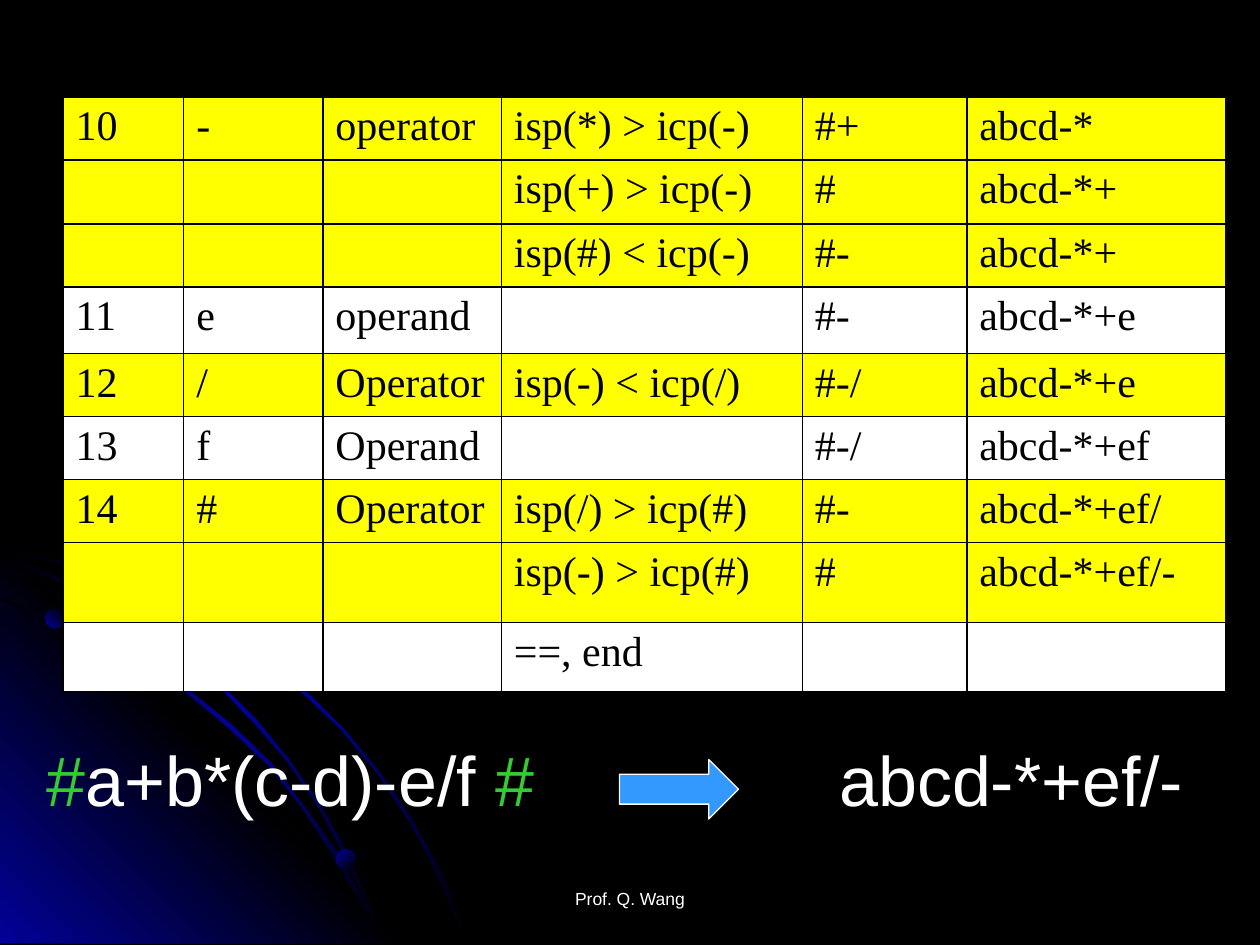
from copy import deepcopy

from lxml.etree import SubElement as Sub
from pptx import Presentation
from pptx.dml.color import RGBColor as RGB
from pptx.enum.shapes import MSO_SHAPE as Shape
from pptx.enum.text import PP_ALIGN as Align
from pptx.oxml.ns import qn
from pptx.util import Pt

BLACK = RGB(0x00, 0x00, 0x00)
WHITE = RGB(0xFF, 0xFF, 0xFF)
YELLOW = RGB(0xFF, 0xFF, 0x00)
GREEN = RGB(0x33, 0xCC, 0x33)
SKY = RGB(0x33, 0x99, 0xFF)
NAVY = RGB(0x01, 0x01, 0x99)

FLOOR = 539.3
WIDE_ARC = [(0, 313), (41, 322), (70.5, 330.5), (98, 343.5), (125.5, 358),
            (150.5, 375), (174, 394.5), (196, 416), (216, 440), (234, 466.5),
            (244, 484.5), (253.5, 502.5), (260.5, 520.5), (268, FLOOR)]
LOW_ARC = [(0, 342), (29.5, 351.5), (57, 363.5), (84, 378.5), (109.5, 395.5),
           (132.5, 414.5), (155, 436.5), (174, 461), (191.5, 486.5),
           (206, 512.5), (213, 525.5), (218, FLOOR)]
MID_ARC = [(0, 318), (28, 327.5), (54.5, 340.5), (80, 355), (103.5, 371.5),
           (126, 391), (147, 412.5), (165, 434), (183, 460), (193.5, 479),
           (203, 499), (211.5, 518.5), (218, FLOOR)]

COLS = [69, 79.5, 102, 172, 94, 148]
HEIGHTS = [36, 36.5, 36, 38, 36, 36, 36, 45.5, 39.5]
STEPS = [
    (YELLOW, "10", "-", "operator", "isp(*) > icp(-)", "#+", "abcd-*"),
    (YELLOW, "", "", "", "isp(+) > icp(-)", "#", "abcd-*+"),
    (YELLOW, "", "", "", "isp(#) < icp(-)", "#-", "abcd-*+"),
    (WHITE, "11", "e", "operand", "", "#-", "abcd-*+e"),
    (YELLOW, "12", "/", "Operator", "isp(-) < icp(/)", "#-/", "abcd-*+e"),
    (WHITE, "13", "f", "Operand", "", "#-/", "abcd-*+ef"),
    (YELLOW, "14", "#", "Operator", "isp(/) > icp(#)", "#-", "abcd-*+ef/"),
    (YELLOW, "", "", "", "isp(-) > icp(#)", "#", "abcd-*+ef/-"),
    (WHITE, "", "", "", "==, end", "", ""),
]


def style(para, face, size, color):
    font = para.font
    font.name, font.size, font.color.rgb = face, Pt(size), color


def blend(shape, colors, angle):
    """Fill with evenly spaced colours; the angle runs counterclockwise."""
    shape.shadow.inherit = False
    shape.line.fill.background()
    fill = shape.fill
    fill.gradient()
    fill.gradient_angle = angle
    stops = next(shape._element.spPr.iter(qn("a:gsLst")))
    for _ in colors[2:]:
        stops.append(deepcopy(stops[0]))
    for i, (stop, color) in enumerate(zip(fill.gradient_stops, colors)):
        stop.color.rgb = color
        stop.position = i / (len(colors) - 1)


def add_path(slide, points, colors, angle):
    path = slide.shapes.build_freeform(*points[0], scale=Pt(1))
    path.add_line_segments(points[1:], close=True)
    blend(path.convert_to_shape(), colors, angle)


def add_arc(slide, edge):
    """Draw a thin band along the inner side of an edge."""
    inner = [(max(0, x - 1.4), min(FLOOR, y + 1.4)) for x, y in edge]
    add_path(slide, edge + inner[::-1], [BLACK, NAVY, BLACK], 315)


def add_dot(slide, left, top, size, angle):
    box = map(Pt, (left, top, size, size))
    dot = slide.shapes.add_shape(Shape.OVAL, *box)
    blend(dot, [NAVY, BLACK], angle)


def add_decor(slide):
    add_arc(slide, WIDE_ARC)
    corner = [(0, 307.5), (232, FLOOR), (0, FLOOR)]
    add_path(slide, corner, [NAVY, BLACK, NAVY], 45)
    add_arc(slide, LOW_ARC)
    add_arc(slide, MID_ARC)
    add_dot(slide, 26, 348, 11, 45)
    add_dot(slide, 192, 485.5, 11.5, 315)


def add_border(cell):
    props = cell._tc.get_or_add_tcPr()
    for side in ("lnL", "lnR", "lnT", "lnB"):
        line = Sub(props, qn(f"a:{side}"), w=str(Pt(1)))
        fill = Sub(line, qn("a:solidFill"))
        Sub(fill, qn("a:srgbClr"), val=str(BLACK))


def add_steps(slide):
    box = map(Pt, (36, 55.5, sum(COLS), sum(HEIGHTS)))
    table = slide.shapes.add_table(len(STEPS), len(COLS), *box).table
    table.first_row = table.horz_banding = False
    for col, width in zip(table.columns, COLS):
        col.width = Pt(width)
    for row, height, (color, *texts) in zip(table.rows, HEIGHTS, STEPS):
        row.height = Pt(height)
        for cell, text in zip(row.cells, texts):
            add_border(cell)
            cell.fill.solid()
            cell.fill.fore_color.rgb = color
            cell.text = text
            style(cell.text_frame.paragraphs[0], "Times New Roman", 24, BLACK)


def add_para(slide, left, top, width, height, before):
    box = slide.shapes.add_textbox(*map(Pt, (left, top, width, height)))
    box.text_frame.word_wrap = True
    para = box.text_frame.paragraphs[0]
    para.space_before = Pt(before)
    return para


def add_result(slide):
    para = add_para(slide, 19.5, 417.5, 684, 73.5, 4)
    tabs = Sub(para._p.get_or_add_pPr(), qn("a:tabLst"))
    Sub(tabs, qn("a:tab"), pos=str(Pt(453)), algn="l")
    style(para, "Arial", 40, WHITE)
    for text, color in (("#", GREEN), ("a+b*(c-d)-e/f ", WHITE),
                        ("#\t", GREEN), ("abcd-*+ef/-", WHITE)):
        run = para.add_run()
        run.text = text
        run.font.color.rgb = color


def add_arrow(slide):
    box = map(Pt, (354, 434, 68, 34))
    arrow = slide.shapes.add_shape(Shape.RIGHT_ARROW, *box)
    arrow.shadow.inherit = False
    arrow.fill.solid()
    arrow.fill.fore_color.rgb = SKY
    arrow.line.color.rgb = WHITE
    arrow.line.width = Pt(0.75)


def add_footer(slide):
    para = add_para(slide, 246, 504, 228, 36, 12)
    para.alignment = Align.CENTER
    para.add_run().text = "Prof. Q. Wang"
    style(para, "Arial", 10, WHITE)


def main():
    deck = Presentation()
    deck.slide_width, deck.slide_height = Pt(720), Pt(540)
    slide = deck.slides.add_slide(deck.slide_layouts[6])
    back = slide.background.fill
    back.solid()
    back.fore_color.rgb = BLACK
    add_decor(slide)
    add_footer(slide)
    add_steps(slide)
    add_result(slide)
    add_arrow(slide)
    deck.save("out.pptx")


if __name__ == "__main__":
    main()
